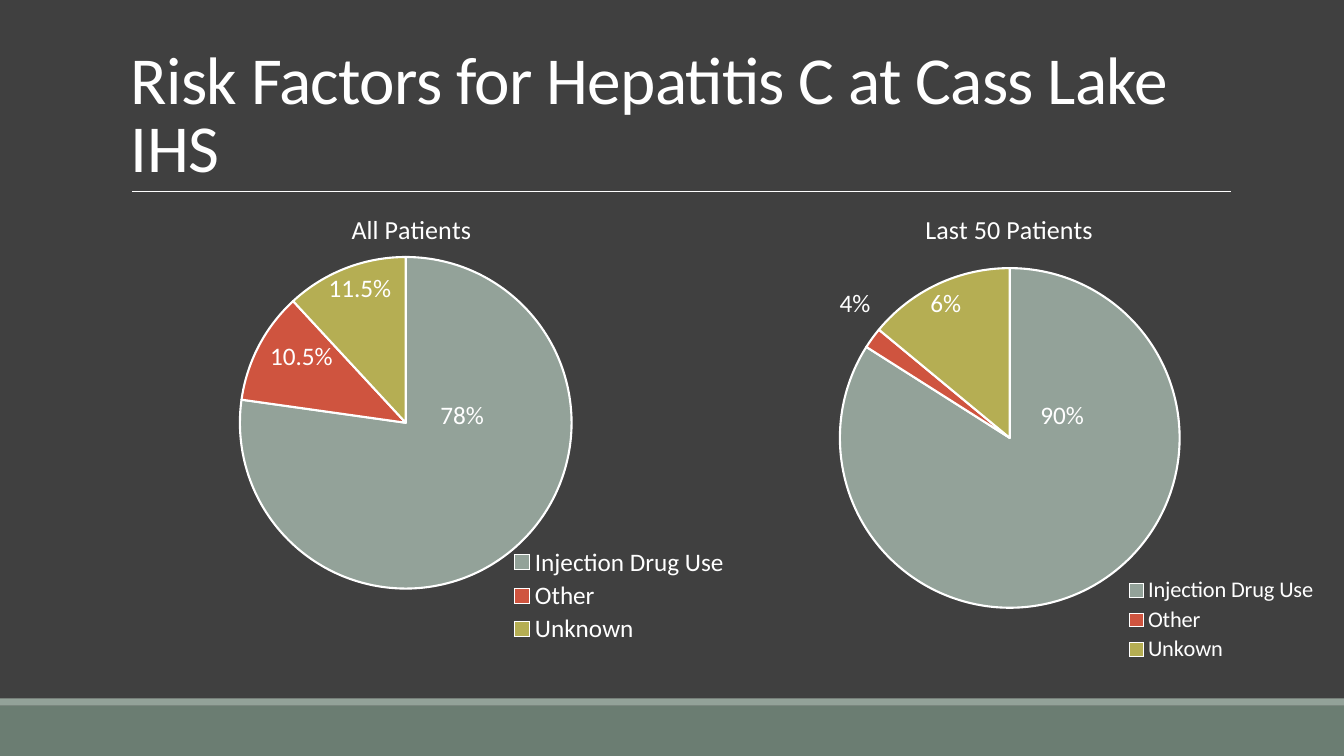
from lxml import etree
from pptx import Presentation
from pptx.chart.data import CategoryChartData
from pptx.dml.color import RGBColor
from pptx.enum import chart as ch, shapes, text
from pptx.oxml import ns
from pptx.util import Inches, Pt

THEME = {
    "font": "Calibri",
    "background": "404040",
    "ink": "FFFFFF",
    "slices": ["93A299", "CF543F", "B5AE53"],
    "title": 48,
    "chart_title": 18.6,
    "label": 18,
}
HEADLINE = ("Risk Factors for Hepatitis C at Cass Lake IHS", (1.2, 0.31, 11, 1.59))
BANDS = [("6B7D72", (0, 7, 13.33, 0.5)), ("93A299", (0, 6.93, 13.33, 0.07))]
RULE = (1.31, 1.9, 12.21, 1.9)
PIES = [
    {
        "name": "All Patients",
        "factors": {"Injection Drug Use": 78, "Other": 11, "Unknown": 12},
        "frame": (0.57, 1.78, 6.91, 4.67),
        "heading": (3.44, 2.05),
        "plot": (2.38, 2.55, 3.29, 3.29),
        "legend": (4.99, 5.4, 2.3, 1.02),
        "legend_size": 18,
    },
    {
        "name": "Last 50 Patients",
        "factors": {"Injection Drug Use": 84, "Other": 2, "Unkown": 14},
        "frame": (6.69, 1.9, 6.64, 4.71),
        "heading": None,
        "plot": (8.33, 2.66, 3.37, 3.37),
        "legend": (11.09, 5.7, 2.05, 0.9),
        "legend_size": 16,
    },
]
SHARES = [
    ("90%", (10.22, 3.91, 0.92, 0.4)),
    ("6%", (9.13, 2.8, 0.77, 0.4)),
    ("4%", (8.23, 2.8, 0.73, 0.4)),
    ("78%", (4.27, 3.91, 0.92, 0.4)),
    ("10.5%", (2.58, 3.33, 0.94, 0.4)),
    ("11.5%", (3.16, 2.65, 1.11, 0.4)),
]


def color(value):
    return RGBColor.from_string(value)


def inches(box):
    return [Inches(v) for v in box]


def style(font, size):
    font.name = THEME["font"]
    font.size = Pt(size)
    font.bold = False
    font.color.rgb = color(THEME["ink"])


def add_text(slide, words, box, size, anchor=text.MSO_ANCHOR.TOP, leading=None, spacing=None):
    frame = slide.shapes.add_textbox(*inches(box)).text_frame
    frame.word_wrap = True
    frame.vertical_anchor = anchor
    paragraph = frame.paragraphs[0]
    paragraph.line_spacing = leading
    run = paragraph.add_run()
    run.text = words
    style(run.font, size)
    if spacing is not None:
        run._r.get_or_add_rPr().set("spc", str(int(spacing * 100)))


def place(element, box, frame, inner=False):
    for old in element.findall(ns.qn("c:layout")):
        element.remove(old)
    layout = etree.Element(ns.qn("c:layout"))
    manual = etree.SubElement(layout, ns.qn("c:manualLayout"))
    rules = [("layoutTarget", "inner")] if inner else []
    rules += [("xMode", "edge"), ("yMode", "edge")]
    origin = (frame[0], frame[1], 0, 0)
    extent = (frame[2], frame[3]) * 2
    for tag, value, start, size in zip("xywh", box, origin, extent):
        rules.append((tag, f"{(value - start) / size:.4f}"))
    for tag, value in rules:
        etree.SubElement(manual, ns.qn(f"c:{tag}")).set("val", value)
    element.insert(0 if inner else 1, layout)


def add_pie(slide, pie):
    data = CategoryChartData()
    data.categories = list(pie["factors"])
    data.add_series(pie["name"], list(pie["factors"].values()))
    chart = slide.shapes.add_chart(
        ch.XL_CHART_TYPE.PIE, *inches(pie["frame"]), data
    ).chart
    style(chart.font, 10)

    chart.has_title = True
    heading = chart.chart_title.text_frame.paragraphs[0].add_run()
    heading.text = pie["name"]
    style(heading.font, THEME["chart_title"])

    chart.has_legend = True
    chart.legend.position = ch.XL_LEGEND_POSITION.BOTTOM
    chart.legend.include_in_layout = False
    style(chart.legend.font, pie["legend_size"])

    plot = chart.plots[0]
    plot.vary_by_categories = True
    for index, fill in enumerate(THEME["slices"]):
        wedge = plot.series[0].points[index].format
        wedge.fill.solid()
        wedge.fill.fore_color.rgb = color(fill)
        wedge.line.color.rgb = color(THEME["ink"])
        wedge.line.width = Pt(1.5)

    area = chart._chartSpace.find(".//" + ns.qn("c:plotArea"))
    place(area, pie["plot"], pie["frame"], inner=True)
    place(chart.legend._element, pie["legend"], pie["frame"])
    if pie["heading"]:
        place(chart.chart_title._element, pie["heading"], pie["frame"])


def main():
    deck = Presentation()
    deck.slide_width, deck.slide_height = inches((13.33, 7.5))
    slide = deck.slides.add_slide(deck.slide_layouts[6])
    slide.background.fill.solid()
    slide.background.fill.fore_color.rgb = color(THEME["background"])

    for fill, box in BANDS:
        band = slide.shapes.add_shape(shapes.MSO_SHAPE.RECTANGLE, *inches(box))
        band.shadow.inherit = False
        band.fill.solid()
        band.fill.fore_color.rgb = color(fill)
        band.line.fill.background()

    rule = slide.shapes.add_connector(shapes.MSO_CONNECTOR.STRAIGHT, *inches(RULE))
    rule.line.color.rgb = color(THEME["ink"])
    rule.line.width = Pt(0.5)
    etree.SubElement(rule._element.spPr, ns.qn("a:effectLst"))

    add_text(slide, *HEADLINE, THEME["title"], anchor=text.MSO_ANCHOR.BOTTOM,
             leading=0.85, spacing=-0.5)
    for pie in PIES:
        add_pie(slide, pie)
    for share, box in SHARES:
        add_text(slide, share, box, THEME["label"])

    deck.save("out.pptx")


if __name__ == "__main__":
    main()
